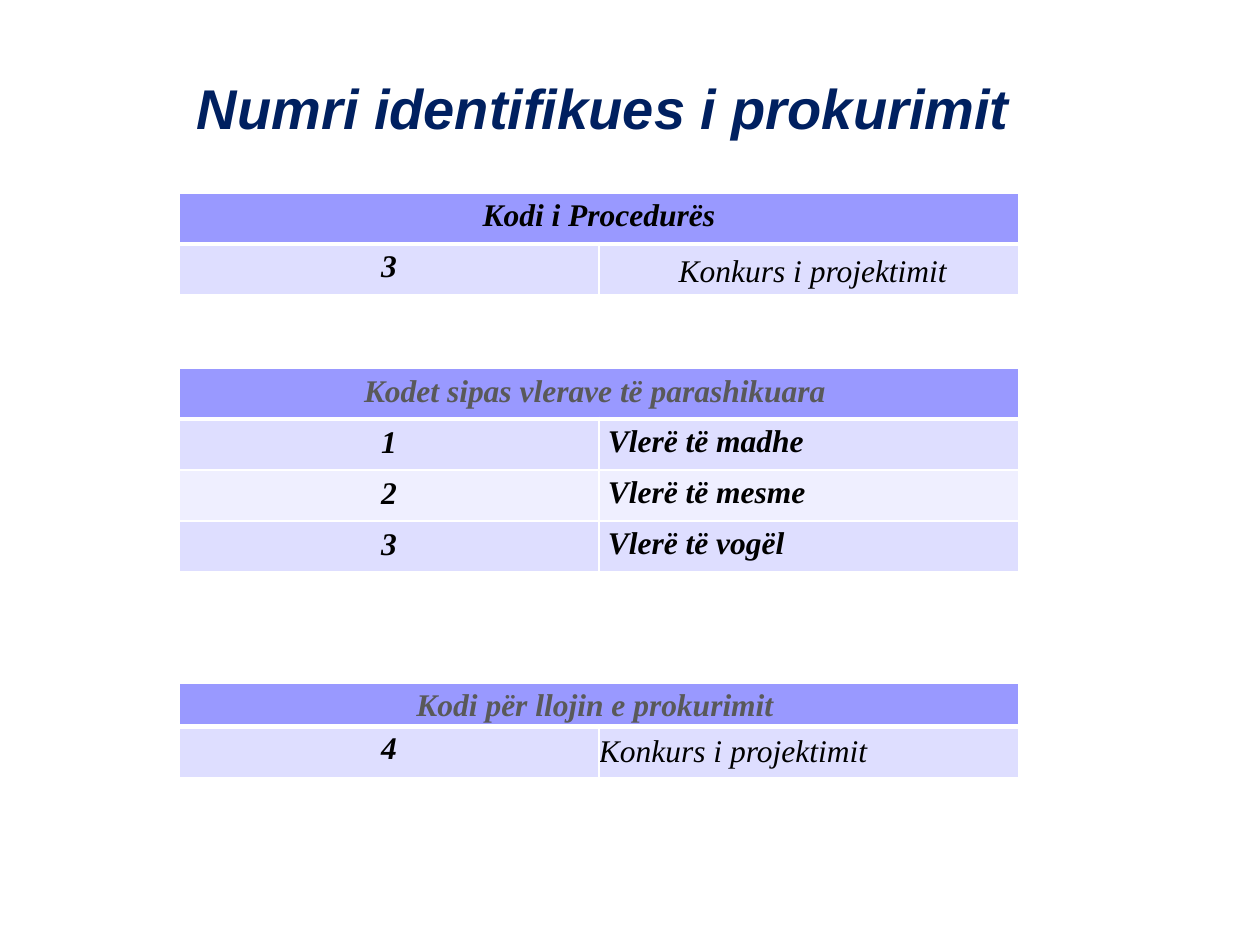
"""Build the slide on procurement identification numbers with its three code tables."""
from dataclasses import dataclass

from lxml.etree import SubElement
from pptx import Presentation
from pptx.dml.color import RGBColor
from pptx.enum.text import MSO_ANCHOR, MSO_AUTO_SIZE, PP_ALIGN
from pptx.oxml.ns import qn
from pptx.util import Emu, Pt

PX = 914400 / 126


@dataclass(frozen=True)
class Theme:
    title_font: str = "Arial"
    table_font: str = "Times New Roman"
    title_size: int = 32
    table_size: int = 18
    navy: str = "002060"
    black: str = "000000"
    gray: str = "595959"
    header: str = "9999FF"
    bands: tuple = ("DEDEFF", "EFEFFF")
    border: str = "FFFFFF"


theme = Theme()


def px(value):
    return Emu(round(value * PX))


def style_text(paragraph, text, font_name, size, color, bold=True):
    paragraph.add_run().text = text
    font = paragraph.font
    font.name, font.size = font_name, Pt(size)
    font.bold, font.italic = bold, True
    font.color.rgb = RGBColor.from_string(color)


cell_styles = {
    "tight": (9, 0, 1.15, MSO_ANCHOR.TOP),
    "roomy": (13, 6, None, MSO_ANCHOR.TOP),
    "spaced": (0, 0, 1.15, MSO_ANCHOR.MIDDLE),
    "flush": (0, 0, None, MSO_ANCHOR.MIDDLE),
}
center, left, justify = PP_ALIGN.CENTER, PP_ALIGN.LEFT, PP_ALIGN.JUSTIFY
code_tables = [
    (193, 51, "Kodi i Procedurës", theme.black, "tight",
     ["3"], ["\u00a0Konkurs i projektimit".replace("\u00a0", " ")], ("spaced", center, False)),
    (683, 42, "Kodi për llojin e prokurimit ", theme.gray, "tight",
     ["4"], ["Konkurs i projektimit"], ("flush", left, False)),
    (368, 51, "Kodet sipas vlerave të parashikuara ", theme.gray, "roomy",
     ["1", "2", "3"], ["Vlerë të madhe", "Vlerë të mesme ", "Vlerë të vogël "],
     ("tight", justify, True)),
]

deck = Presentation()
deck.slide_width, deck.slide_height = px(1260), px(945)
page = deck.slides.add_slide(deck.slide_layouts[6])

title = page.shapes.add_textbox(px(63), px(67), px(1081), px(81)).text_frame
title.word_wrap = True
title.auto_size = MSO_AUTO_SIZE.SHAPE_TO_FIT_TEXT
title.paragraphs[0].alignment = center
style_text(title.paragraphs[0], "Numri identifikues i prokurimit",
           theme.title_font, theme.title_size, theme.navy)

row_height = 51
for top, header_height, heading, heading_color, code_style, codes, labels, label_format in code_tables:
    row_count = len(codes) + 1
    height = header_height + row_height * len(codes)
    table = page.shapes.add_table(row_count, 2, px(179), px(top), px(840), px(height)).table
    for row in table.rows:
        row.height = px(row_height)
    table.rows[0].height = px(header_height)
    table.cell(0, 0).merge(table.cell(0, 1))

    label_style, label_alignment, label_bold = label_format
    contents = [[(heading, heading_color, code_style, center, True), None]]
    for code, label in zip(codes, labels):
        contents.append([
            (code, theme.black, code_style, center, True),
            (label, theme.black, label_style, label_alignment, label_bold),
        ])

    for row_index, row_contents in enumerate(contents):
        fill_color = theme.bands[(row_index - 1) % 2] if row_index else theme.header
        for column_index, content in enumerate(row_contents):
            cell = table.cell(row_index, column_index)
            properties = cell._tc.get_or_add_tcPr()
            for side in ("L", "R", "T", "B"):
                heavy = (row_index, side) in ((0, "B"), (1, "T"))
                line = SubElement(properties, qn(f"a:ln{side}"), w=str(Pt(3 if heavy else 1)))
                SubElement(SubElement(line, qn("a:solidFill")), qn("a:srgbClr"), val=theme.border)
            cell.fill.solid()
            cell.fill.fore_color.rgb = RGBColor.from_string(fill_color)
            if content is None:
                continue
            text, color, style, alignment, bold = content
            side_inset, end_inset, spacing, anchor = cell_styles[style]
            cell.margin_left = cell.margin_right = px(side_inset)
            cell.margin_top = cell.margin_bottom = px(end_inset)
            cell.vertical_anchor = anchor
            paragraph = cell.text_frame.paragraphs[0]
            paragraph.alignment = alignment
            paragraph.line_spacing = spacing
            style_text(paragraph, text, theme.table_font, theme.table_size, color, bold)

deck.save("out.pptx")
